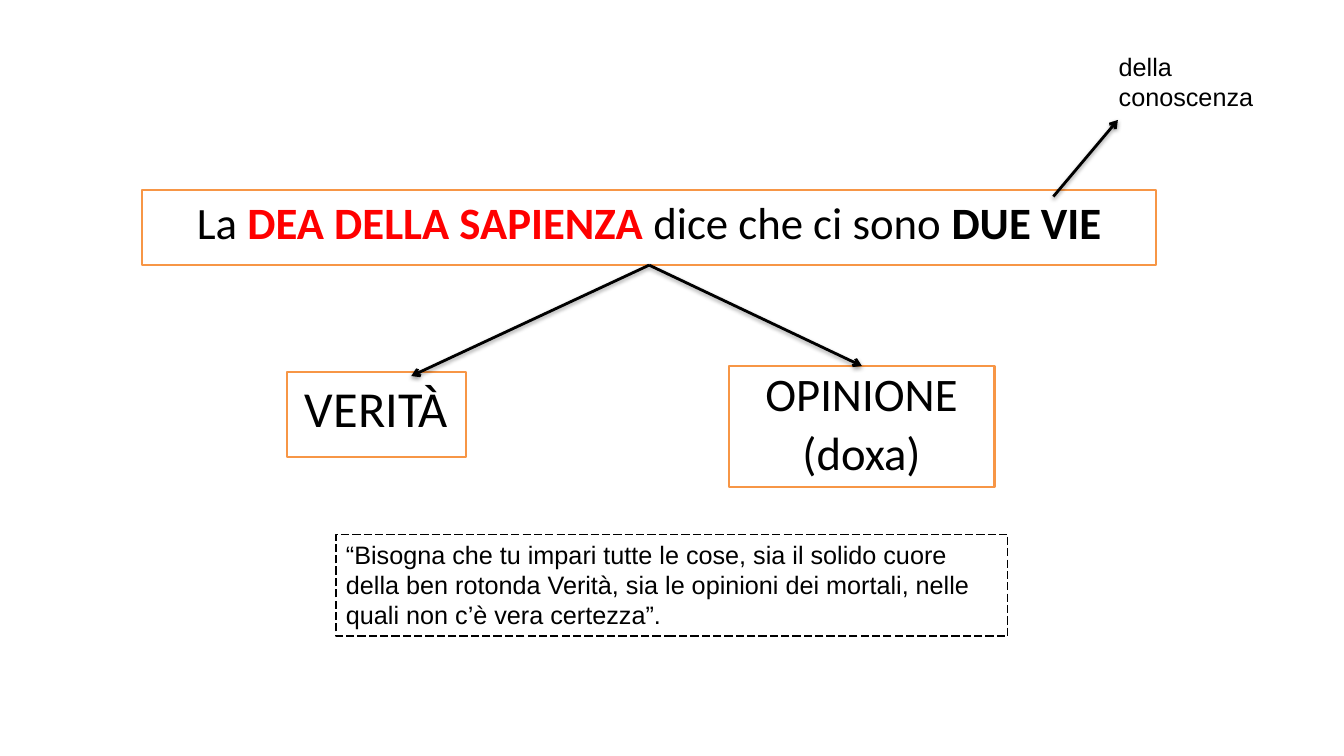
from lxml import etree
from pptx import Presentation
from pptx.dml.color import RGBColor
from pptx.enum.dml import MSO_LINE
from pptx.enum.shapes import MSO_CONNECTOR, MSO_SHAPE
from pptx.enum.text import MSO_ANCHOR, PP_ALIGN
from pptx.oxml import parse_xml
from pptx.oxml.ns import nsdecls, qn
from pptx.util import Pt

BLACK = RGBColor(0x00, 0x00, 0x00)
RED = RGBColor(0xFF, 0x00, 0x00)
ORANGE = RGBColor(0xF7, 0x96, 0x46)
CENTER, LEFT = PP_ALIGN.CENTER, PP_ALIGN.LEFT
TOP = MSO_ANCHOR.TOP
RECTANGLE = MSO_SHAPE.RECTANGLE
STRAIGHT = MSO_CONNECTOR.STRAIGHT
LONG_DASH = MSO_LINE.LONG_DASH

LAYOUT_TITLE_ONLY = 5
FORK = (463.7, 189.4)
SHADOW = (
    f'<a:effectLst {nsdecls("a")}>'
    '<a:outerShdw blurRad="40000" dist="20000" dir="5400000" rotWithShape="0">'
    '<a:srgbClr val="000000"><a:alpha val="38000"/></a:srgbClr>'
    '</a:outerShdw></a:effectLst>'
)


def place(shape, left, top, width, height):
    """Position a shape, with lengths in points."""
    shape.left, shape.top = Pt(left), Pt(top)
    shape.width, shape.height = Pt(width), Pt(height)


def style_text(shape, font, size, align, before=0, spacing=1.0):
    """Give all the text of a shape one font, size and paragraph format."""
    frame = shape.text_frame
    frame.word_wrap = True
    frame.vertical_anchor = TOP
    for paragraph in frame.paragraphs:
        paragraph.alignment = align
        paragraph.space_before = Pt(before)
        paragraph.line_spacing = spacing
        for run in paragraph.runs:
            run.font.name = font
            run.font.size = Pt(size)
            run.font.color.rgb = BLACK


def outline(shape, color, width):
    """Leave a shape unfilled and draw its border."""
    shape.fill.background()
    shape.line.color.rgb = color
    shape.line.width = Pt(width)


def add_statement(slide, box, parts):
    """Fill the title with (text, color, bold) parts inside an orange frame."""
    statement = slide.shapes.title
    place(statement, *box)
    outline(statement, ORANGE, 1.5)
    paragraph = statement.text_frame.paragraphs[0]
    for text, _, _ in parts:
        paragraph.add_run().text = text
    style_text(statement, "Calibri", 32, CENTER, 6.4)
    for run, (_, color, bold) in zip(paragraph.runs, parts):
        run.font.color.rgb = color
        run.font.bold = bold


def add_frame(slide, box, text, color, width):
    """Add an outlined rectangle with text."""
    frame = slide.shapes.add_shape(RECTANGLE, *map(Pt, box))
    frame.shadow.inherit = False
    outline(frame, color, width)
    frame.text_frame.text = text
    return frame


def add_way(slide, box, text, size, spacing=1.0):
    """Add one of the two ways the goddess names."""
    way = add_frame(slide, box, text, ORANGE, 1.5)
    style_text(way, "Calibri", size, CENTER, 0.2 * size, spacing)


def add_quote(slide, box, text):
    """Add the quotation in a dashed frame."""
    quote = add_frame(slide, box, text, BLACK, 0.75)
    quote.line.dash_style = LONG_DASH
    style_text(quote, "Arial", 18, LEFT)


def add_note(slide, box, text):
    """Add an unframed note."""
    note = slide.shapes.add_textbox(*map(Pt, box))
    note.text_frame.text = text
    style_text(note, "Arial", 18, LEFT)


def add_arrow(slide, start, end):
    """Add a black arrow with a soft shadow below it."""
    arrow = slide.shapes.add_connector(STRAIGHT, *map(Pt, start + end))
    arrow.line.color.rgb = BLACK
    arrow.line.width = Pt(2)
    etree.SubElement(arrow.line._get_or_add_ln(), qn("a:tailEnd"), type="arrow")
    arrow._element.spPr.append(parse_xml(SHADOW))


def main():
    """Build the slide on the two ways of knowledge."""
    deck = Presentation()
    deck.slide_width, deck.slide_height = Pt(960), Pt(540)
    slide = deck.slides.add_slide(deck.slide_layouts[LAYOUT_TITLE_ONLY])

    add_statement(slide, (101.5, 135.4, 724.4, 54), [
        ("La ", BLACK, False),
        ("DEA DELLA SAPIENZA ", RED, True),
        ("dice che ci sono ", BLACK, False),
        ("DUE VIE", BLACK, True),
    ])
    add_way(slide, (204.8, 265.7, 128.2, 60.5), "VERITÀ", 36)
    add_way(slide, (520.4, 261.4, 190, 86.8), "OPINIONE\n(doxa)", 33.3, 0.9)
    add_note(slide, (792, 33.1, 140.4, 51.1), "della conoscenza")
    for start, end in [
        ((752.4, 140.4), (798.5, 85.7)),
        (FORK, (293.8, 268.6)),
        (FORK, (615.6, 261.4)),
    ]:
        add_arrow(slide, start, end)
    add_quote(slide, (240, 381.6, 480, 72.7),
              "“Bisogna che tu impari tutte le cose, sia il solido cuore della "
              "ben rotonda Verità, sia le opinioni dei mortali, nelle quali non "
              "c’è vera certezza”.")
    deck.save("out.pptx")


if __name__ == "__main__":
    main()
